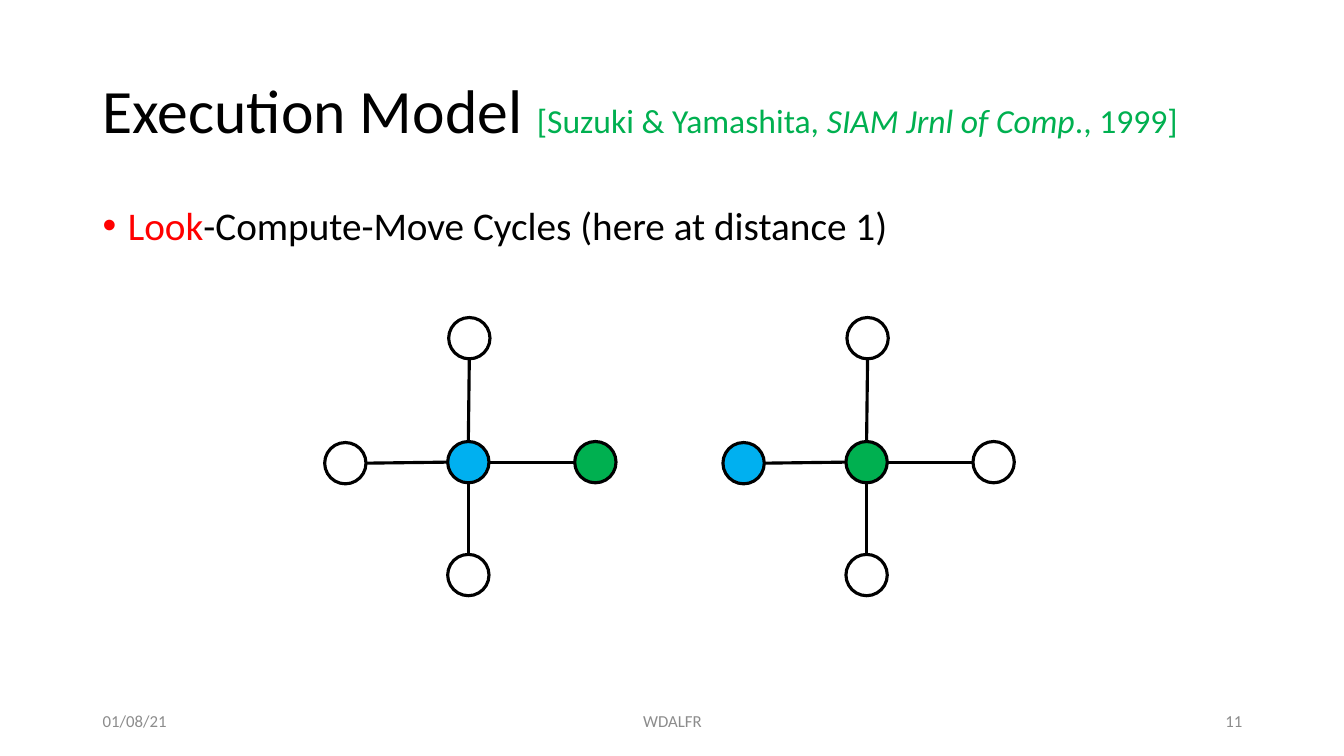
from dataclasses import dataclass

from lxml import etree
from pptx import Presentation
from pptx import util as u
from pptx.dml import color
from pptx.enum import shapes, text
from pptx.oxml import ns


@dataclass(frozen=True)
class Theme:
    font: str = "Calibri"
    black: str = "000000"
    white: str = "FFFFFF"
    green: str = "00B050"
    blue: str = "00B0F0"
    red: str = "FF0000"
    grey: str = "8C8C8C"
    title: int = 44
    cite: int = 24
    body: int = 28
    foot: int = 12
    line: float = 2.25


T = Theme()
NODE = 0.41  # node diameter

# Node offsets in a graph's box, and the direction of each spoke from the centre
CENTRE = (1.22, 1.23)
ARMS = {
    "top": ((1.23, 0), (0, -1)),
    "left": ((0, 1.24), (-1, 0)),
    "right": ((2.48, 1.23), (1, 0)),
    "bottom": ((1.22, 2.35), (0, 1)),
}


def rgb(value):
    return color.RGBColor.from_string(value)


def inches(*values):
    return [u.Inches(v) for v in values]


def add_run(p, words, size, fill=T.black, italic=False):
    r = p.add_run()
    r.text = words
    r.font.name, r.font.size, r.font.italic = T.font, u.Pt(size), italic
    r.font.color.rgb = rgb(fill)


def setup_frame(sp, anchor, align=text.PP_ALIGN.LEFT):
    tf = sp.text_frame
    tf.word_wrap = True
    tf.auto_size = text.MSO_AUTO_SIZE.NONE
    tf.vertical_anchor = anchor
    p = tf.paragraphs[0]
    p.alignment = align
    return p


def add_title(s, box):
    sp = s.shapes.title
    sp.left, sp.top, sp.width, sp.height = inches(*box)
    p = setup_frame(sp, text.MSO_ANCHOR.MIDDLE)
    p.line_spacing = 0.9
    add_run(p, "Execution Model ", T.title)
    add_run(p, "[Suzuki & Yamashita, ", T.cite, T.green)
    add_run(p, "SIAM Jrnl of Comp", T.cite, T.green, italic=True)
    add_run(p, "., 1999]", T.cite, T.green)


def add_body(s, box):
    sp = s.shapes.add_textbox(*inches(*box))
    p = setup_frame(sp, text.MSO_ANCHOR.TOP)
    p.line_spacing, p.space_before = 0.9, u.Pt(10)
    pPr = p._p.get_or_add_pPr()
    pPr.set("marL", str(u.Inches(0.25)))
    pPr.set("indent", str(-u.Inches(0.25)))
    etree.SubElement(pPr, ns.qn("a:buFont")).set("typeface", "Arial")
    etree.SubElement(pPr, ns.qn("a:buChar")).set("char", "•")
    add_run(p, "Look", T.body, T.red)
    add_run(p, "-Compute-Move Cycles (here at distance 1)", T.body)


def add_footer(s, box, words, align):
    sp = s.shapes.add_textbox(*inches(*box))
    add_run(setup_frame(sp, text.MSO_ANCHOR.MIDDLE, align), words, T.foot, T.grey)


def add_node(group, x, y, fill):
    sp = group.shapes.add_shape(shapes.MSO_SHAPE.OVAL, *inches(x, y, NODE, NODE))
    sp.shadow.inherit = False
    sp.fill.solid()
    sp.fill.fore_color.rgb = rgb(fill)
    sp.line.color.rgb, sp.line.width = rgb(T.black), u.Pt(T.line)


def add_spoke(group, start, end):
    c = group.shapes.add_connector(shapes.MSO_CONNECTOR.STRAIGHT, *inches(*start, *end))
    c.line.color.rgb, c.line.width = rgb(T.black), u.Pt(T.line)
    etree.SubElement(c._element.spPr, ns.qn("a:effectLst"))


def add_graph(s, left, top, centre_fill, arm_fills):
    """Draw a centre node with four neighbours, joined rim to rim."""
    group = s.shapes.add_group_shape()
    rad = NODE / 2
    cx, cy = left + CENTRE[0], top + CENTRE[1]
    add_node(group, cx, cy, centre_fill)
    for name, ((ox, oy), (dx, dy)) in ARMS.items():
        x, y = left + ox, top + oy
        add_node(group, x, y, arm_fills.get(name, T.white))
        add_spoke(group,
                  (cx + rad * (1 + dx), cy + rad * (1 + dy)),
                  (x + rad * (1 - dx), y + rad * (1 - dy)))


def main():
    prs = Presentation()
    prs.slide_width, prs.slide_height = inches(13.33, 7.5)
    s = prs.slides.add_slide(prs.slide_layouts[5])

    # Heading and bullet
    add_title(s, (0.92, 0.4, 11.5, 1.45))
    add_body(s, (0.92, 2, 11.5, 0.6))

    # The two robots' views
    add_graph(s, 3.22, 3.15, T.blue, {"right": T.green})
    add_graph(s, 7.17, 3.15, T.green, {"left": T.blue})

    # Footer
    for left, width, words, align in (
        (0.92, 3, "01/08/21", text.PP_ALIGN.LEFT),
        (4.42, 4.5, "WDALFR", text.PP_ALIGN.CENTER),
        (9.42, 3, "11", text.PP_ALIGN.RIGHT),
    ):
        add_footer(s, (left, 6.95, width, 0.4), words, align)

    prs.save("out.pptx")


if __name__ == "__main__":
    main()
